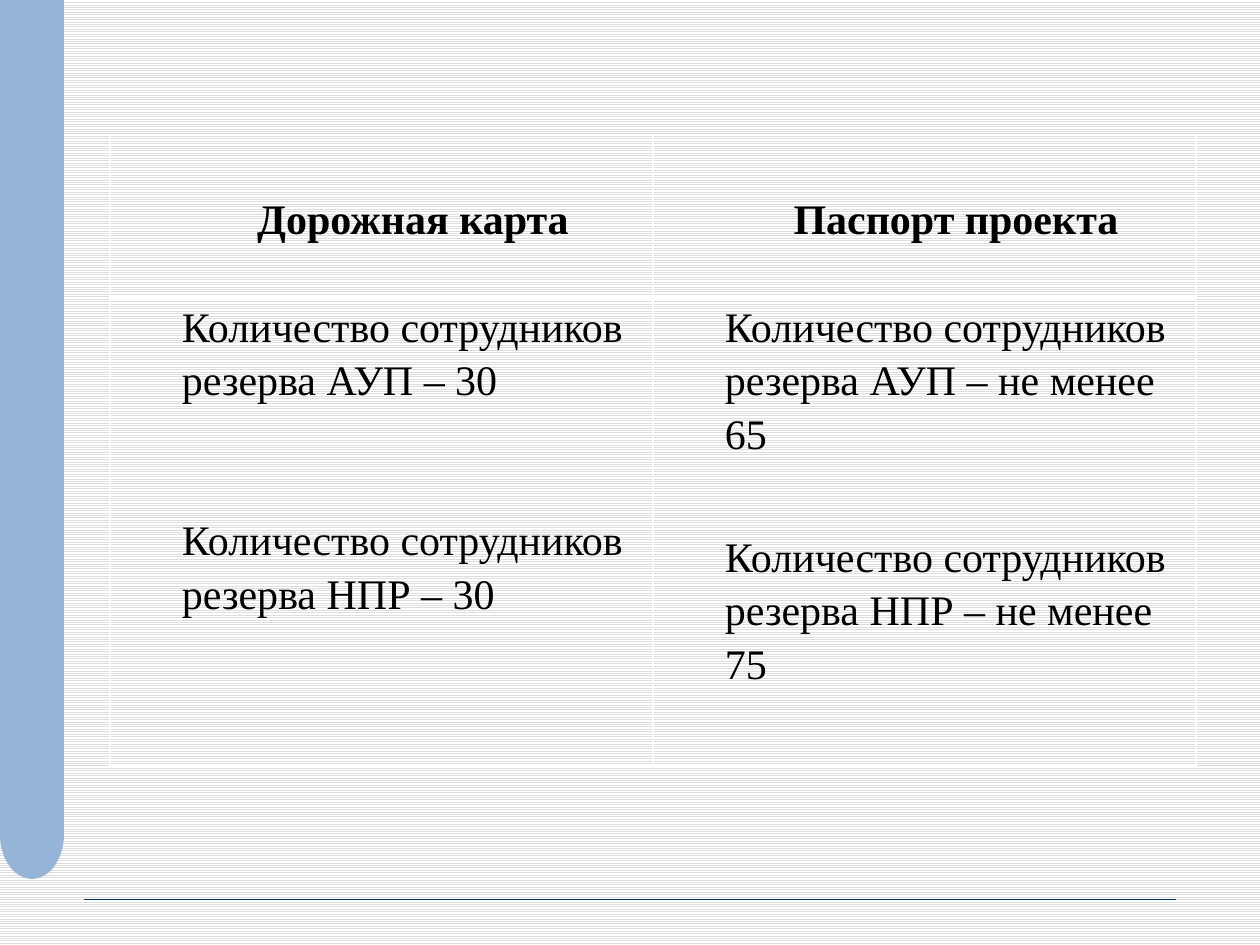
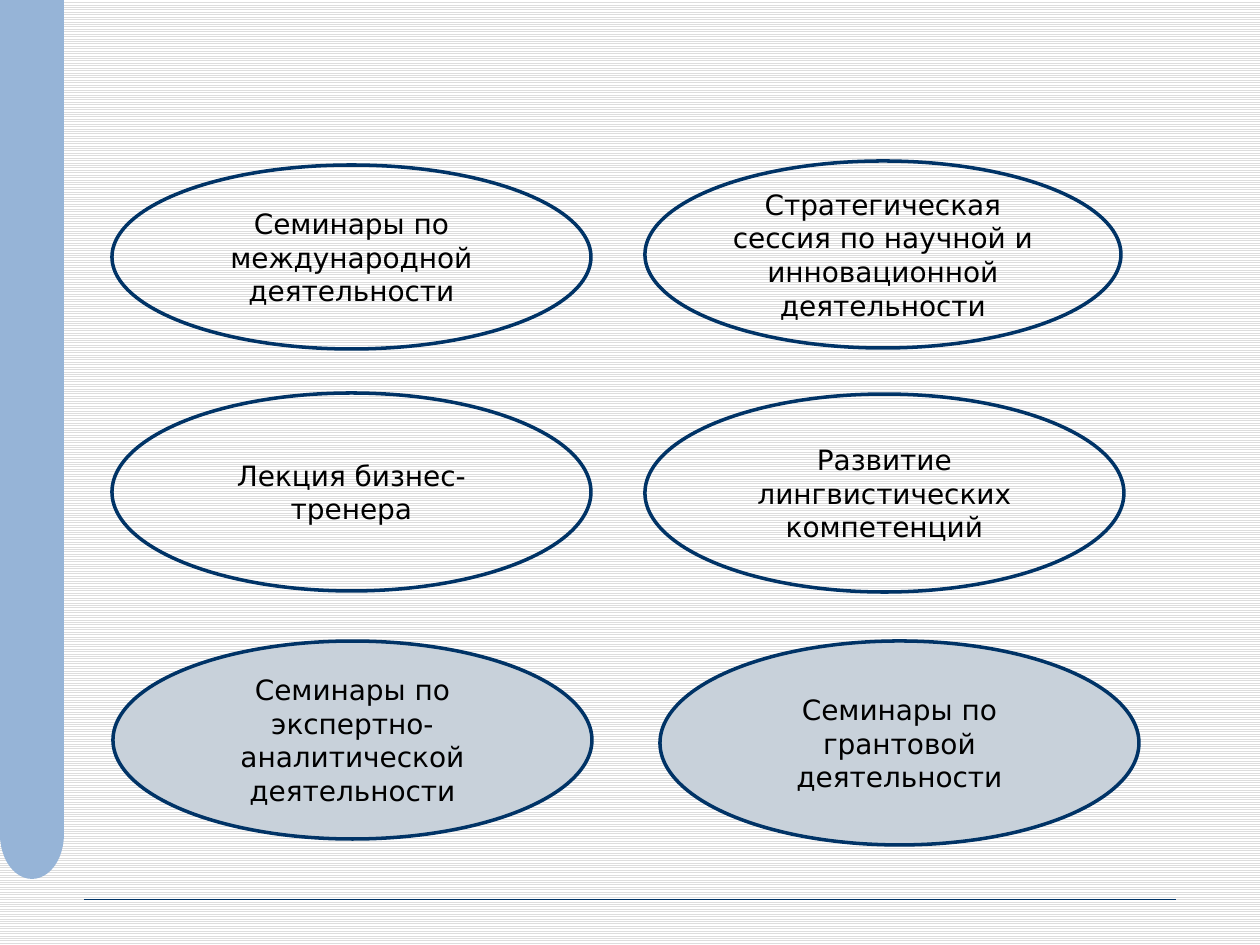
from lxml.etree import SubElement
from pptx import Presentation
from pptx.dml.color import RGBColor
from pptx.enum.dml import MSO_PATTERN
from pptx.enum.shapes import MSO_CONNECTOR, MSO_SHAPE
from pptx.enum.text import MSO_ANCHOR, PP_ALIGN
from pptx.oxml.ns import qn
from pptx.util import Emu, Pt

PX = 914400 / 126
COLORS = {
    "stripe": "DDDDDD", "white": "FFFFFF", "band": "96B4D7",
    "navy": "003366", "done": "C8D1DA", "black": "000000",
}
TABLE_FONT = {"name": "Times New Roman", "size": Pt(24), "bold": False}
HEADER_FONT = {**TABLE_FONT, "bold": True}
OVAL_FONT = {"name": "DejaVu Sans", "size": Pt(16)}
HEADER_FORMAT = {"alignment": PP_ALIGN.CENTER, "line_spacing": 1.15}
BODY_FORMAT = {"alignment": PP_ALIGN.LEFT, "line_spacing": 1.15}

COLUMNS = [
    ("Дорожная карта", 61, [
        "Количество сотрудников резерва АУП – 30",
        "Количество сотрудников резерва НПР – 30"]),
    ("Паспорт проекта", 40, [
        "Количество сотрудников резерва АУП – не менее 65",
        "Количество сотрудников резерва НПР – не менее 75"]),
]
EVENTS = [
    ("Семинары по международной деятельности", (112, 165, 479, 184), None),
    ("Стратегическая сессия по научной и инновационной деятельности",
     (645, 161, 476, 187), None),
    ("Лекция бизнес-тренера", (112, 393, 479, 198), None),
    ("Развитие лингвистических компетенций", (645, 394, 479, 198), None),
    ("Семинары по экспертно-аналитической деятельности",
     (113, 641, 479, 198), "done"),
    ("Семинары по грантовой деятельности", (660, 641, 479, 204), "done"),
]


def px(*lengths):
    """Turn pixel lengths into a list of EMU lengths."""
    return [Emu(round(length * PX)) for length in lengths]


def color(key):
    """Return the palette colour for a key."""
    return RGBColor.from_string(COLORS[key])


def apply_format(target, values):
    """Set each attribute named in values on the target."""
    for attribute, value in values.items():
        setattr(target, attribute, value)


def write(paragraph, text, layout, font):
    """Fill a paragraph with black text in the given format."""
    paragraph.text = text
    apply_format(paragraph, layout)
    apply_format(paragraph.font, font)
    paragraph.font.color.rgb = color("black")


def add_figure(slide, preset, box, fill=None, outline=None):
    """Add a flat preset shape with optional fill and outline."""
    figure = slide.shapes.add_shape(preset, *px(*box))
    figure.shadow.inherit = False
    if fill:
        figure.fill.solid()
        figure.fill.fore_color.rgb = color(fill)
    else:
        figure.fill.background()
    if outline:
        figure.line.color.rgb = color(outline)
        figure.line.width = Pt(2)
    else:
        figure.line.fill.background()
    return figure


def add_base_slide(deck):
    """Add a slide with the striped background, side band and footer rule."""
    slide = deck.slides.add_slide(deck.slide_layouts[6])
    backdrop = slide.background.fill
    backdrop.patterned()
    backdrop.pattern = MSO_PATTERN.LIGHT_HORIZONTAL
    backdrop.fore_color.rgb = color("stripe")
    backdrop.back_color.rgb = color("white")
    footer_rule = slide.shapes.add_connector(
        MSO_CONNECTOR.STRAIGHT, *px(84, 899, 1176, 899))
    footer_rule.line.color.rgb = color("navy")
    footer_rule.line.width = Pt(0.25)
    SubElement(footer_rule._element.spPr, qn("a:effectLst"))
    add_figure(slide, MSO_SHAPE.RECTANGLE, (0, 0, 64, 839), "band")
    add_figure(slide, MSO_SHAPE.OVAL, (0, 790, 64, 89), "band")
    return slide


def style_cell(cell, anchor, **edge_widths):
    """Give a cell its insets, white borders and no fill."""
    side, none = px(9, 0)
    apply_format(cell, {
        "margin_left": side, "margin_right": side,
        "margin_top": none, "margin_bottom": none, "vertical_anchor": anchor})
    properties = cell._tc.get_or_add_tcPr()
    for edge in ("lnL", "lnR", "lnT", "lnB"):
        border = SubElement(properties, qn(f"a:{edge}"),
                            w=str(Pt(edge_widths.get(edge, 1))))
        paint = SubElement(border, qn("a:solidFill"))
        SubElement(paint, qn("a:srgbClr"), val=COLORS["white"])
    cell.fill.background()


def write_cell(cell, texts, layout, font, gap=0):
    """Write indented paragraphs into a cell, set apart by a gap in points."""
    frame = cell.text_frame
    for position, text in enumerate(texts):
        paragraph = frame.add_paragraph() if position else frame.paragraphs[0]
        indent, = px(63)
        paragraph._p.get_or_add_pPr().set("marL", str(indent))
        write(paragraph, text, layout, font)
        if position:
            paragraph.space_before = Pt(gap)


def add_comparison(slide):
    """Add the table that sets the road map against the project passport."""
    table = slide.shapes.add_table(2, 2, *px(110, 135, 1086, 630)).table
    apply_format(table, {"first_row": False, "horz_banding": False})
    for row, height in zip(table.rows, px(163, 467)):
        row.height = height
    for index, (heading, gap, targets) in enumerate(COLUMNS):
        table.columns[index].width, = px(543)
        header, body = table.cell(0, index), table.cell(1, index)
        style_cell(header, MSO_ANCHOR.MIDDLE, lnB=3)
        write_cell(header, [heading], HEADER_FORMAT, HEADER_FONT)
        style_cell(body, MSO_ANCHOR.TOP, lnT=3)
        write_cell(body, targets, BODY_FORMAT, TABLE_FONT, gap)


def add_event(slide, text, box, fill):
    """Add an outlined oval that names one training event."""
    event = add_figure(slide, MSO_SHAPE.OVAL, box, fill, "navy")
    apply_format(event.text_frame, {
        "word_wrap": True, "vertical_anchor": MSO_ANCHOR.MIDDLE})
    write(event.text_frame.paragraphs[0], text,
          {"alignment": PP_ALIGN.CENTER}, OVAL_FONT)


def main():
    """Build both slides and save the deck."""
    deck = Presentation()
    deck.slide_width, deck.slide_height = px(1260, 945)
    add_comparison(add_base_slide(deck))
    events_slide = add_base_slide(deck)
    for event in EVENTS:
        add_event(events_slide, *event)
    deck.save("out.pptx")


if __name__ == "__main__":
    main()
